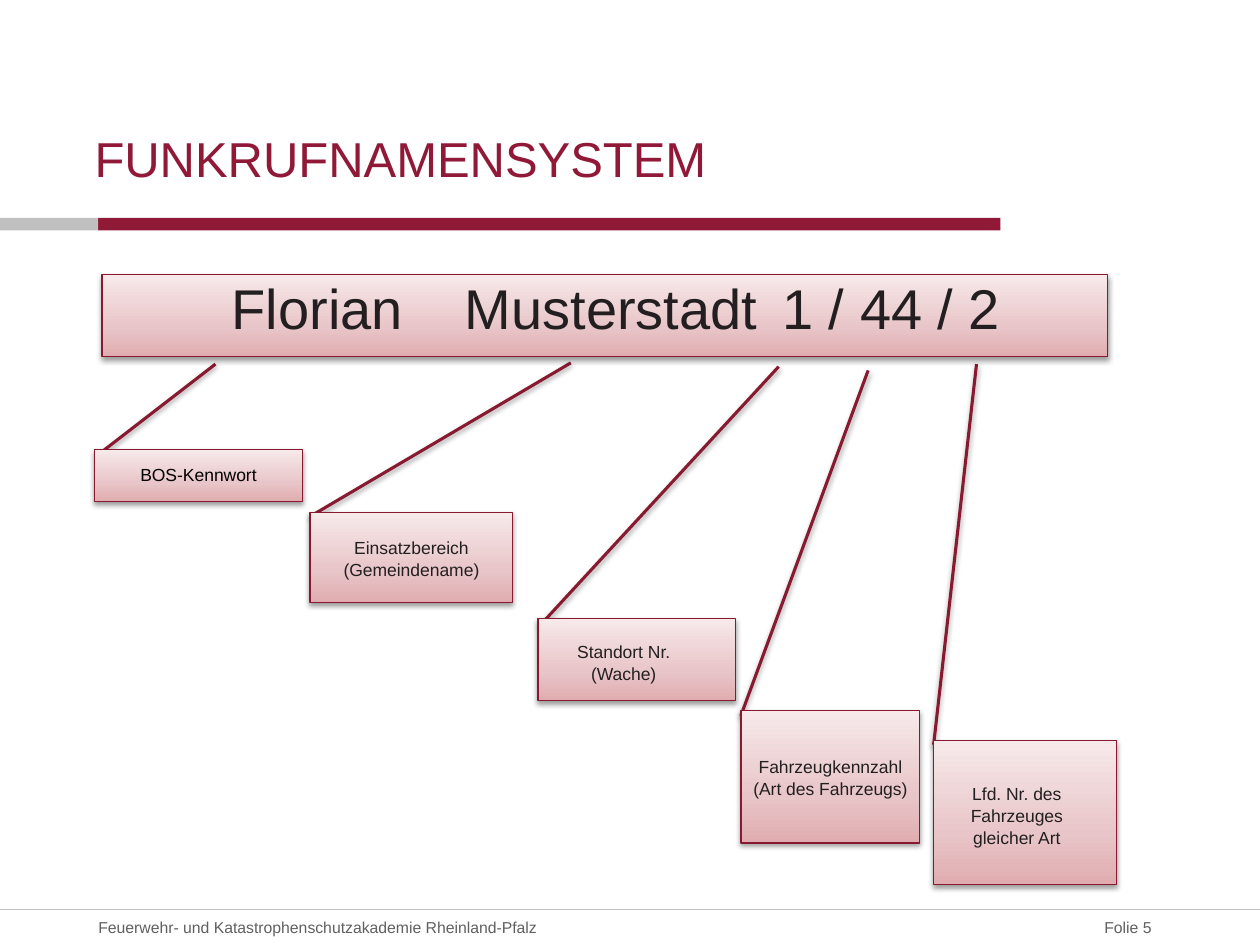
from copy import deepcopy
from dataclasses import dataclass

from lxml.etree import SubElement
from pptx import Presentation
from pptx.dml.color import RGBColor
from pptx.enum.shapes import MSO_CONNECTOR, MSO_SHAPE
from pptx.enum.text import MSO_ANCHOR, MSO_AUTO_SIZE, PP_ALIGN
from pptx.oxml.ns import qn
from pptx.util import Inches, Pt


@dataclass(frozen=True)
class Theme:
    font: str = "Arial"
    accent: str = "8F1936"
    outline: str = "871A30"
    silver: str = "C0C0C0"
    gray: str = "606060"
    ink: str = "231F20"
    black: str = "000000"
    gradient: tuple = ((0, "E0ACB0"), (0.35, "E8C5C8"), (1, "F7E9EA"))
    title_size: int = 28
    call_sign_size: int = 32
    label_size: int = 10
    footer_size: int = 9


THEME = Theme()


@dataclass(frozen=True)
class Label:
    box: tuple
    lines: tuple
    leader: tuple
    color: str = THEME.ink
    spacing: object = 1.05
    insets: tuple = (0, 0, 0)


LABELS = (
    Label((0.75, 3.57, 1.65, 0.41), ("BOS-Kennwort",),
          (1.71, 2.89, 0.79, 3.6), THEME.black, Pt(11.2)),
    Label((2.46, 4.07, 1.61, 0.71), ("Einsatzbereich (Gemeindename)",),
          (4.53, 2.88, 2.46, 4.1)),
    Label((4.27, 4.91, 1.57, 0.65), ("Standort Nr. (Wache)",),
          (6.18, 2.91, 4.28, 4.97), insets=(0.06, 0.04, 0.27)),
    Label((5.88, 5.64, 1.42, 1.05), ("Fahrzeugkennzahl", "(Art des Fahrzeugs)"),
          (6.89, 2.94, 5.88, 5.68)),
    Label((7.41, 5.88, 1.45, 1.14), ("Lfd. Nr. des Fahrzeuges gleicher Art",),
          (7.75, 2.89, 7.41, 5.91), insets=(0.06, 0.04, 0.19)),
)


def inches(values):
    return [Inches(value) for value in values]


def set_effects(item, shadowed):
    effects = SubElement(item._element.spPr, qn("a:effectLst"))
    if shadowed:
        shadow = SubElement(effects, qn("a:outerShdw"), blurRad=str(Pt(3.1)),
                            dist=str(Pt(1.6)), dir="5400000", rotWithShape="0")
        color = SubElement(shadow, qn("a:srgbClr"), val=THEME.black)
        SubElement(color, qn("a:alpha"), val="38000")


def add_line(page, ends, color, width, shadowed=False):
    line = page.shapes.add_connector(MSO_CONNECTOR.STRAIGHT, *inches(ends))
    line.line.color.rgb = RGBColor.from_string(color)
    line.line.width = Pt(width)
    set_effects(line, shadowed)


def write(shape, lines, size, color, align=PP_ALIGN.LEFT, anchor=MSO_ANCHOR.MIDDLE,
          spacing=None, insets=(0, 0, 0), tabs=()):
    frame = shape.text_frame
    frame.word_wrap = True
    frame.auto_size = MSO_AUTO_SIZE.NONE
    frame.vertical_anchor = anchor
    frame.margin_left, frame.margin_top, frame.margin_right = inches(insets)
    frame.margin_bottom = 0
    frame.text = "\n".join(lines)
    for para in frame.paragraphs:
        para.alignment = align
        para.line_spacing = spacing
        if tabs:
            tab_list = SubElement(para._p.get_or_add_pPr(), qn("a:tabLst"))
            for position in tabs:
                SubElement(tab_list, qn("a:tab"), pos=str(Inches(position)), algn="l")
        para.font.name = THEME.font
        para.font.size = Pt(size)
        para.font.color.rgb = RGBColor.from_string(color)


def add_bar(page, box, color):
    bar = page.shapes.add_shape(MSO_SHAPE.RECTANGLE, *inches(box))
    bar.fill.solid()
    bar.fill.fore_color.rgb = RGBColor.from_string(color)
    bar.line.fill.background()
    bar.shadow.inherit = False


def add_panel(page, box):
    panel = page.shapes.add_shape(MSO_SHAPE.RECTANGLE, *inches(box))
    panel.fill.gradient()
    panel.fill.gradient_angle = 90
    stops = panel._element.spPr.find(qn("a:gradFill")).find(qn("a:gsLst"))
    stops.insert(1, deepcopy(stops[0]))
    for element, stop, (position, color) in zip(
            stops, panel.fill.gradient_stops, THEME.gradient):
        element.set("pos", str(round(position * 100000)))
        stop.color.rgb = RGBColor.from_string(color)
    panel.line.color.rgb = RGBColor.from_string(THEME.outline)
    panel.line.width = Pt(0.75)
    set_effects(panel, True)
    return panel


def add_header(page, box):
    left, top, width, height = box
    title = page.shapes.title
    title.left, title.top, title.width, title.height = inches(
        (left - 0.03, top, 6.39, height))
    write(title, ["FUNKRUFNAMENSYSTEM"], THEME.title_size, THEME.accent,
          anchor=MSO_ANCHOR.BOTTOM)
    rule_top = top + height + 0.24
    add_bar(page, (left, rule_top, width, 0.1), THEME.accent)
    add_bar(page, (0, rule_top, left, 0.1), THEME.silver)


def add_call_sign(page, box):
    panel = add_panel(page, box)
    write(panel, ["Florian\tMusterstadt\t1 / 44 / 2"], THEME.call_sign_size, THEME.ink,
          PP_ALIGN.CENTER, spacing=Pt(25.4), insets=(0.18, 0.04, 0),
          tabs=(1.85, 3.76, 4.11, 4.37, 4.89, 5.16))


def add_label(page, label):
    add_line(page, label.leader, THEME.outline, 1.75, shadowed=True)
    panel = add_panel(page, label.box)
    write(panel, label.lines, THEME.label_size, label.color, PP_ALIGN.CENTER,
          spacing=label.spacing, insets=label.insets)


def add_footer(page, box):
    left, top, width, height = box
    add_line(page, (0, top, 10, top), THEME.silver, 0.75)
    number_width = 1.2
    credit = page.shapes.add_textbox(*inches((left, top, 5.51, height)))
    write(credit, ["Feuerwehr- und Katastrophenschutzakademie Rheinland-Pfalz"],
          THEME.footer_size, THEME.gray)
    number = page.shapes.add_textbox(
        *inches((left + width - number_width, top, number_width, height)))
    write(number, ["Folie 5"], THEME.footer_size, THEME.gray, PP_ALIGN.RIGHT)


def main():
    deck = Presentation()
    deck.slide_width, deck.slide_height = Inches(10), Inches(7.5)
    page = deck.slides.add_slide(deck.slide_layouts[5])
    add_header(page, (0.78, 0.48, 7.16, 1.01))
    for label in LABELS:
        add_label(page, label)
    add_call_sign(page, (0.81, 2.18, 7.98, 0.65))
    add_footer(page, (0.78, 7.22, 8.36, 0.28))
    deck.save("out.pptx")


if __name__ == "__main__":
    main()
